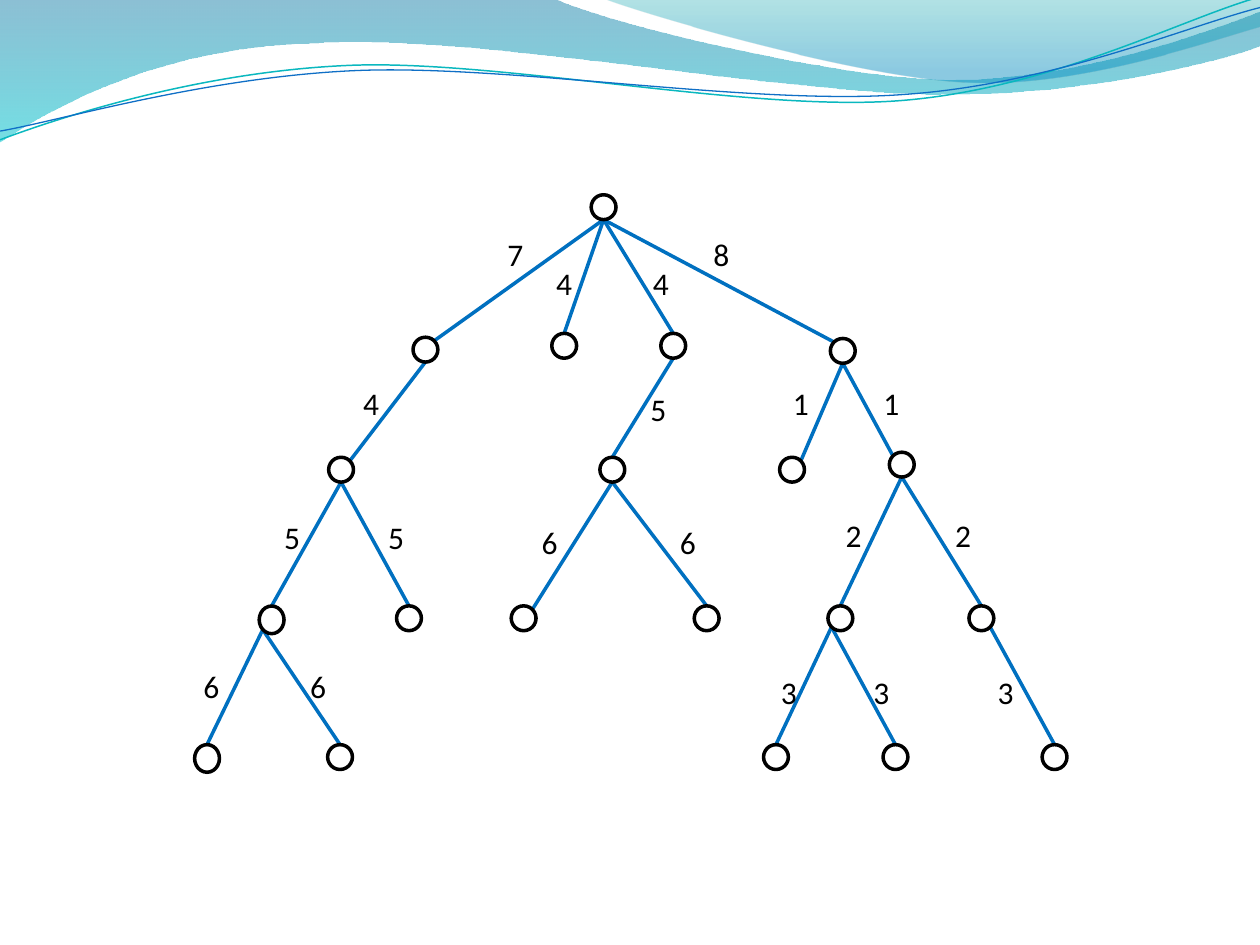
from lxml import etree
from pptx import Presentation
from pptx.dml.color import RGBColor
from pptx.enum.shapes import MSO_CONNECTOR, MSO_SHAPE
from pptx.enum.text import MSO_AUTO_SIZE, PP_ALIGN
from pptx.oxml.ns import qn
from pptx.util import Pt

STRAIGHT = MSO_CONNECTOR.STRAIGHT
OVAL = MSO_SHAPE.OVAL
CENTER = PP_ALIGN.CENTER
GROW = MSO_AUTO_SIZE.SHAPE_TO_FIT_TEXT

COLORS = {
    "node": "FFFFFF", "outline": "000000", "text": "000000", "edge": "0070C0",
    "band_top": "0074A1", "band_bottom": "00C6CF",
    "corner_top": "00A1A9", "corner_bottom": "008BBF",
    "teal_line": "0AB8BF", "blue_line": "0F6FC6",
}
FONT = "Calibri"
NODE_SIZE = 14.2
TALL_NODE = 15.8
LABEL_WIDTH, LABEL_HEIGHT = 32, 29

# A path is a start point, then segments: one point is a line, three a cubic curve.
# Gradient stops: colour, position, opacity in percent.
FILLED_WAVES = [
    ([(0, 0), [(316.8, -0.7)],
      [(342.7, 12.2), (478.1, 45.4), (545.8, 45.4)],
      [(614.2, 45.4), (689.8, 18.7), (720, 6.5)],
      [(720.7, 25.9)],
      [(707.8, 31.7), (626.4, 54.7), (537.1, 54)],
      [(447.8, 54), (275, 20.2), (185, 24.5)],
      [(92.9, 25.9), (33.1, 59.8), (-0.7, 81.4)]],
     [("band_top", 0, 45), ("band_bottom", 1, 55)]),
    ([(344.9, -0.7),
      [(366.5, 7.9), (491, 44.6), (553.7, 46.8)],
      [(616.3, 49.7), (691.9, 23), (720, 15.1)],
      [(720, 0)]],
     [("corner_top", 0, 30), ("corner_bottom", 0.8, 45)]),
]
LINE_WAVES = [
    ([(0, 79.9),
      [(34.6, 67), (113.8, 41), (199.4, 37.4)],
      [(284.4, 33.8), (427, 64.1), (513.4, 57.6)],
      [(599.8, 51.1), (675.4, 10.8), (718.6, -1.4)]], "teal_line", 0.85),
    ([(0, 74.9),
      [(33.8, 69.1), (118.1, 43.9), (203.8, 40.3)],
      [(290.2, 36.7), (429.8, 60.5), (516.2, 54)],
      [(601.9, 48.2), (677.5, 15.1), (720, 4.3)]], "blue_line", 0.75),
]

# Node centres; a name extends its parent's name by one letter.
NODES = {
    "r": (344.9, 118.4),
    "ra": (243.1, 199.8), "rb": (322.4, 197.6), "rc": (384.7, 197.6), "rd": (481.6, 200.5),
    "raa": (194.9, 268.4), "rca": (349.9, 268.4), "rda": (452.6, 268.4), "rdb": (515.3, 265.5),
    "raaa": (155.2, 354.2), "raab": (233.7, 353.3),
    "rcaa": (299.2, 353.3), "rcab": (403.8, 353.3),
    "rdba": (480.2, 353.3), "rdbb": (560.8, 353.3),
    "raaaa": (118.3, 433.4), "raaab": (194.3, 432.6),
    "rdbaa": (443.4, 432.6), "rdbab": (511.7, 432.6), "rdbba": (602.6, 432.6),
}
TALL_NODES = {"raaa", "raaaa"}

# Child node: label, label centre x, label top
LABELS = {
    "ra": ("7", 294.5, 131), "rb": ("4", 322.4, 147.3),
    "rc": ("4", 377.6, 147.3), "rd": ("8", 412.2, 131),
    "raa": ("4", 212, 216), "rca": ("5", 376.2, 219.3),
    "rda": ("1", 457.6, 216), "rdb": ("1", 509.4, 216),
    "raaa": ("5", 166.9, 292.3), "raab": ("5", 226.4, 292.3),
    "rcaa": ("6", 314.1, 295.2), "rcab": ("6", 393.1, 295.2),
    "rdba": ("2", 487.7, 291.3), "rdbb": ("2", 550.3, 291.3),
    "raaaa": ("6", 120.8, 377.7), "raaab": ("6", 181.8, 377.7),
    "rdbaa": ("3", 450.7, 380.9), "rdbab": ("3", 503.6, 380.9),
    "rdbba": ("3", 574.6, 380.9),
}

# Edges leave at the bottom and arrive at the top, except at these nodes.
DIAGONAL = 0.71
TOP, BOTTOM = (0, -1), (0, 1)
TOP_LEFT, TOP_RIGHT = (-DIAGONAL, -DIAGONAL), (DIAGONAL, -DIAGONAL)
BOTTOM_LEFT, BOTTOM_RIGHT = (-DIAGONAL, DIAGONAL), (DIAGONAL, DIAGONAL)
ARRIVALS = {"ra": TOP_RIGHT, "rd": TOP_LEFT, "raa": TOP_RIGHT, "rda": TOP_RIGHT,
            "rdb": TOP_LEFT, "rcaa": TOP_RIGHT}
DEPARTURES = {"raaa": BOTTOM_LEFT, "rdba": BOTTOM_LEFT, "rdbb": BOTTOM_RIGHT}


def color(name):
    return RGBColor.from_string(COLORS[name])


def add_wave(slide, path, close):
    """Build the outline through all points, then merge each triple into a cubic curve."""
    start, *segments = path
    points = [(Pt(x), Pt(y)) for segment in segments for x, y in segment]
    builder = slide.shapes.build_freeform(Pt(start[0]), Pt(start[1]))
    builder.add_line_segments(points, close=close)
    shape = builder.convert_to_shape()
    shape.shadow.inherit = False
    lines = iter(list(shape._element.spPr.iter(qn("a:lnTo"))))
    for segment in segments:
        first, *others = [next(lines) for _ in segment]
        if others:
            curve = etree.Element(qn("a:cubicBezTo"))
            first.addprevious(curve)
            for line in (first, *others):
                curve.append(line[0])
                line.getparent().remove(line)
    return shape


def add_filled_wave(slide, path, stops):
    shape = add_wave(slide, path, close=True)
    shape.line.fill.background()
    shape.fill.gradient()
    shape.fill.gradient_angle = 270
    for stop, (name, position, _) in zip(shape.fill.gradient_stops, stops):
        stop.color.rgb = color(name)
        stop.position = position
    for element, stop in zip(shape._element.spPr.iter(qn("a:srgbClr")), stops):
        etree.SubElement(element, qn("a:alpha")).set("val", str(stop[2] * 1000))


def add_line_wave(slide, path, name, width):
    shape = add_wave(slide, path, close=False)
    shape.fill.background()
    shape.line.color.rgb = color(name)
    shape.line.width = Pt(width)


def node_height(name):
    return TALL_NODE if name in TALL_NODES else NODE_SIZE


def rim_point(name, direction):
    x, y = NODES[name]
    return Pt(x + direction[0] * NODE_SIZE / 2), Pt(y + direction[1] * node_height(name) / 2)


def add_edge(slide, child):
    parent = child[:-1]
    begin = rim_point(parent, DEPARTURES.get(parent, BOTTOM))
    end = rim_point(child, ARRIVALS.get(child, TOP))
    connector = slide.shapes.add_connector(STRAIGHT, *begin, *end)
    connector.line.color.rgb = color("edge")
    connector.line.width = Pt(2)
    etree.SubElement(connector._element.spPr, qn("a:effectLst"))


def add_node(slide, name):
    x, y = NODES[name]
    height = node_height(name)
    shape = slide.shapes.add_shape(OVAL, Pt(x - NODE_SIZE / 2), Pt(y - height / 2),
                                   Pt(NODE_SIZE), Pt(height))
    shape.shadow.inherit = False
    shape.fill.solid()
    shape.fill.fore_color.rgb = color("node")
    shape.line.color.rgb = color("outline")
    shape.line.width = Pt(2)


def add_label(slide, text, x, top):
    box = slide.shapes.add_textbox(Pt(x - LABEL_WIDTH / 2), Pt(top),
                                   Pt(LABEL_WIDTH), Pt(LABEL_HEIGHT))
    box.text_frame.word_wrap = True
    box.text_frame.auto_size = GROW
    paragraph = box.text_frame.paragraphs[0]
    paragraph.text = text
    paragraph.alignment = CENTER
    paragraph.font.name = FONT
    paragraph.font.size = Pt(18)
    paragraph.font.color.rgb = color("text")


def main():
    presentation = Presentation()
    presentation.slide_width, presentation.slide_height = Pt(720), Pt(540)
    slide = presentation.slides.add_slide(presentation.slide_layouts[6])
    for wave in FILLED_WAVES:
        add_filled_wave(slide, *wave)
    for wave in LINE_WAVES:
        add_line_wave(slide, *wave)
    for child in LABELS:
        add_edge(slide, child)
    for name in NODES:
        add_node(slide, name)
    for label in LABELS.values():
        add_label(slide, *label)
    presentation.save("out.pptx")


if __name__ == "__main__":
    main()
